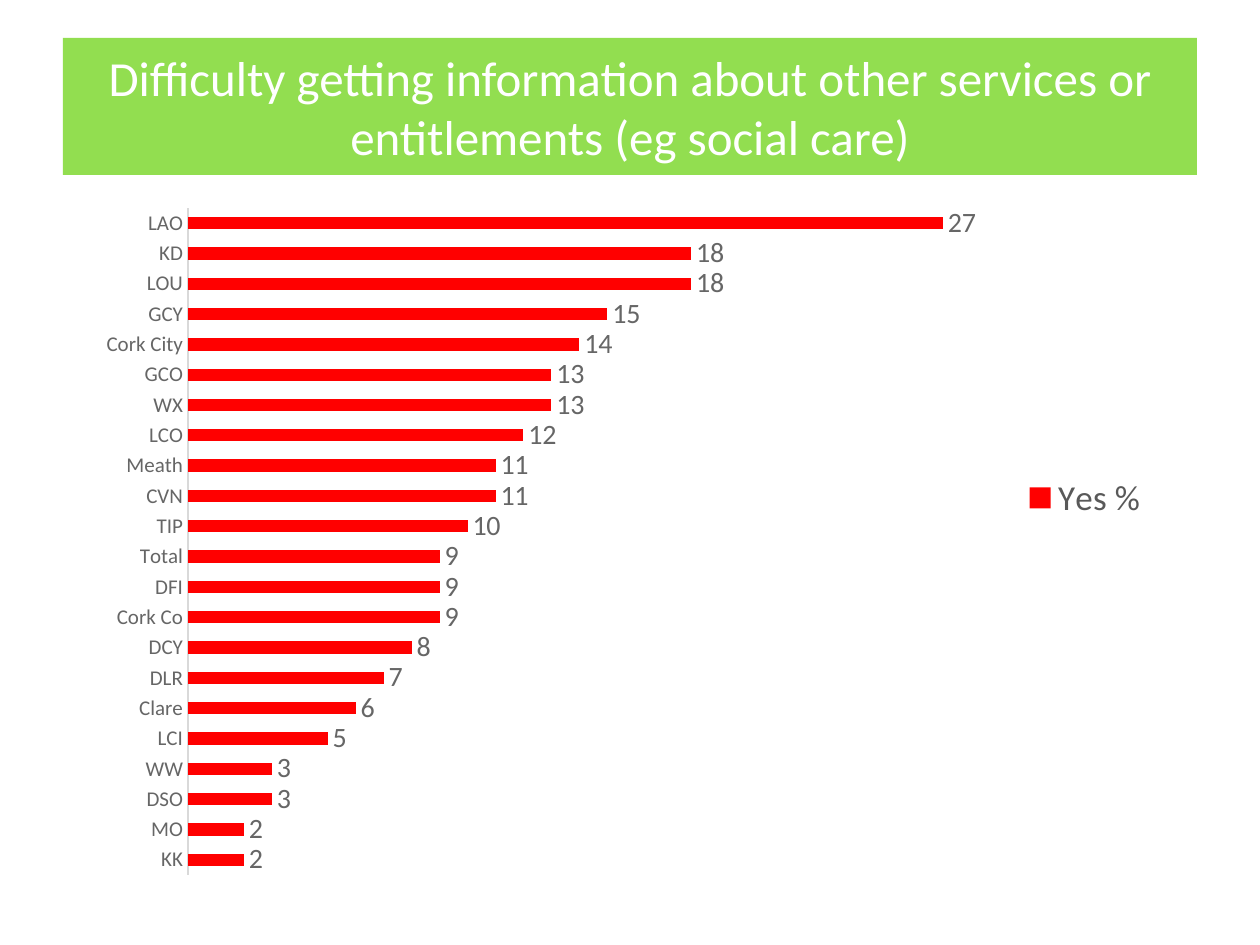
from typing import NamedTuple

from lxml import etree
from pptx import Presentation
from pptx.chart.data import CategoryChartData
from pptx.dml.color import RGBColor
from pptx.enum.chart import XL_CHART_TYPE, XL_LABEL_POSITION, XL_LEGEND_POSITION, XL_TICK_MARK
from pptx.enum.shapes import MSO_SHAPE
from pptx.enum.text import MSO_ANCHOR, PP_ALIGN
from pptx.oxml.ns import qn
from pptx.util import Emu, Pt

BARS = XL_CHART_TYPE.BAR_CLUSTERED
OUTSIDE_END = XL_LABEL_POSITION.OUTSIDE_END
LEGEND_RIGHT = XL_LEGEND_POSITION.RIGHT
NO_TICKS = XL_TICK_MARK.NONE
RECTANGLE = MSO_SHAPE.RECTANGLE
MIDDLE = MSO_ANCHOR.MIDDLE
CENTER = PP_ALIGN.CENTER

PX_PER_INCH = 126
FONT = "Calibri"
COLORS = {
    "banner": "92DE50",
    "banner_text": "FFFFFF",
    "bar": "FF0000",
    "label": "666666",
    "legend": "595959",
    "axis": "D9D9D9",
    "text": "000000",
}


class Box(NamedTuple):
    left: int
    top: int
    width: int
    height: int


class Area(NamedTuple):
    area: str
    yes_percent: int


BANNER = Box(63, 38, 1134, 137)
CHART = Box(84, 195, 1113, 694)
BAR_REGION = Box(188, 208, 839, 667)
LEGEND = Box(1020, 475, 130, 46)

RESULTS = [
    Area("KK", 2), Area("MO", 2), Area("DSO", 3), Area("WW", 3),
    Area("LCI", 5), Area("Clare", 6), Area("DLR", 7), Area("DCY", 8),
    Area("Cork Co", 9), Area("DFI", 9), Area("Total", 9), Area("TIP", 10),
    Area("CVN", 11), Area("Meath", 11), Area("LCO", 12), Area("WX", 13),
    Area("GCO", 13), Area("Cork City", 14), Area("GCY", 15), Area("LOU", 18),
    Area("KD", 18), Area("LAO", 27),
]


def px(length: int) -> Emu:
    """Turn slide pixels into EMU."""
    return Emu(round(length * 914400 / PX_PER_INCH))


def color(name: str) -> RGBColor:
    """Look up a named colour."""
    return RGBColor.from_string(COLORS[name])


def set_font(font, size: int, color_name: str) -> None:
    """Apply the slide typeface with a size and colour."""
    font.name = FONT
    font.size = Pt(size)
    font.color.rgb = color(color_name)


def place_in_chart(part, region: Box, index: int, inner: bool = False) -> None:
    """Fix the position of a chart part as fractions of the chart."""
    for old_layout in part.findall(qn("c:layout")):
        part.remove(old_layout)
    layout = etree.Element(qn("c:layout"))
    manual = etree.SubElement(layout, qn("c:manualLayout"))
    settings = {"layoutTarget": "inner"} if inner else {}
    settings |= {
        "xMode": "edge",
        "yMode": "edge",
        "x": f"{(region.left - CHART.left) / CHART.width:.4f}",
        "y": f"{(region.top - CHART.top) / CHART.height:.4f}",
        "w": f"{region.width / CHART.width:.4f}",
        "h": f"{region.height / CHART.height:.4f}",
    }
    for tag, value in settings.items():
        etree.SubElement(manual, qn(f"c:{tag}")).set("val", value)
    part.insert(index, layout)


def add_banner(slide, heading: str) -> None:
    """Draw the green heading banner."""
    banner = slide.shapes.add_shape(RECTANGLE, *map(px, BANNER))
    banner.shadow.inherit = False
    banner.fill.solid()
    banner.fill.fore_color.rgb = color("banner")
    banner.line.fill.background()
    frame = banner.text_frame
    frame.word_wrap = True
    frame.vertical_anchor = MIDDLE
    frame.text = heading
    paragraph = frame.paragraphs[0]
    paragraph.alignment = CENTER
    set_font(paragraph.font, 28, "banner_text")


def add_results_chart(slide, results: list[Area]) -> None:
    """Draw the percentage answering yes in each area."""
    data = CategoryChartData(number_format="#,##0")
    data.categories = [result.area for result in results]
    data.add_series("Yes %", [result.yes_percent for result in results])
    chart = slide.shapes.add_chart(BARS, *map(px, CHART), data).chart
    chart.has_title = False
    set_font(chart.font, 10, "text")

    area_axis = chart.category_axis
    area_axis.major_tick_mark = NO_TICKS
    area_axis.minor_tick_mark = NO_TICKS
    area_axis.format.line.color.rgb = color("axis")
    area_axis.format.line.width = Pt(1)
    set_font(area_axis.tick_labels.font, 12, "label")

    percent_axis = chart.value_axis
    percent_axis.minimum_scale = 0
    percent_axis.maximum_scale = 30
    percent_axis.has_major_gridlines = False
    percent_axis.visible = False

    plot = chart.plots[0]
    plot.vary_by_categories = False
    plot.gap_width = 146
    plot.overlap = -25
    bar_fill = plot.series[0].format.fill
    bar_fill.solid()
    bar_fill.fore_color.rgb = color("bar")

    plot.has_data_labels = True
    percent_labels = plot.data_labels
    percent_labels.show_value = True
    percent_labels.number_format = "#,##0"
    percent_labels.number_format_is_linked = False
    percent_labels.position = OUTSIDE_END
    set_font(percent_labels.font, 16, "label")

    chart.has_legend = True
    chart.legend.position = LEGEND_RIGHT
    chart.legend.include_in_layout = False
    set_font(chart.legend.font, 20, "legend")

    chart_xml = chart.element
    place_in_chart(chart_xml.find(f".//{qn('c:plotArea')}"), BAR_REGION, 0, inner=True)
    place_in_chart(chart_xml.find(f".//{qn('c:legend')}"), LEGEND, 1)


def main() -> None:
    """Build and save the slide."""
    presentation = Presentation()
    presentation.slide_width = px(1260)
    presentation.slide_height = px(945)
    slide = presentation.slides.add_slide(presentation.slide_layouts[6])
    add_banner(
        slide,
        "Difficulty getting information about other services or entitlements (eg social care)",
    )
    add_results_chart(slide, RESULTS)
    presentation.save("out.pptx")


if __name__ == "__main__":
    main()
